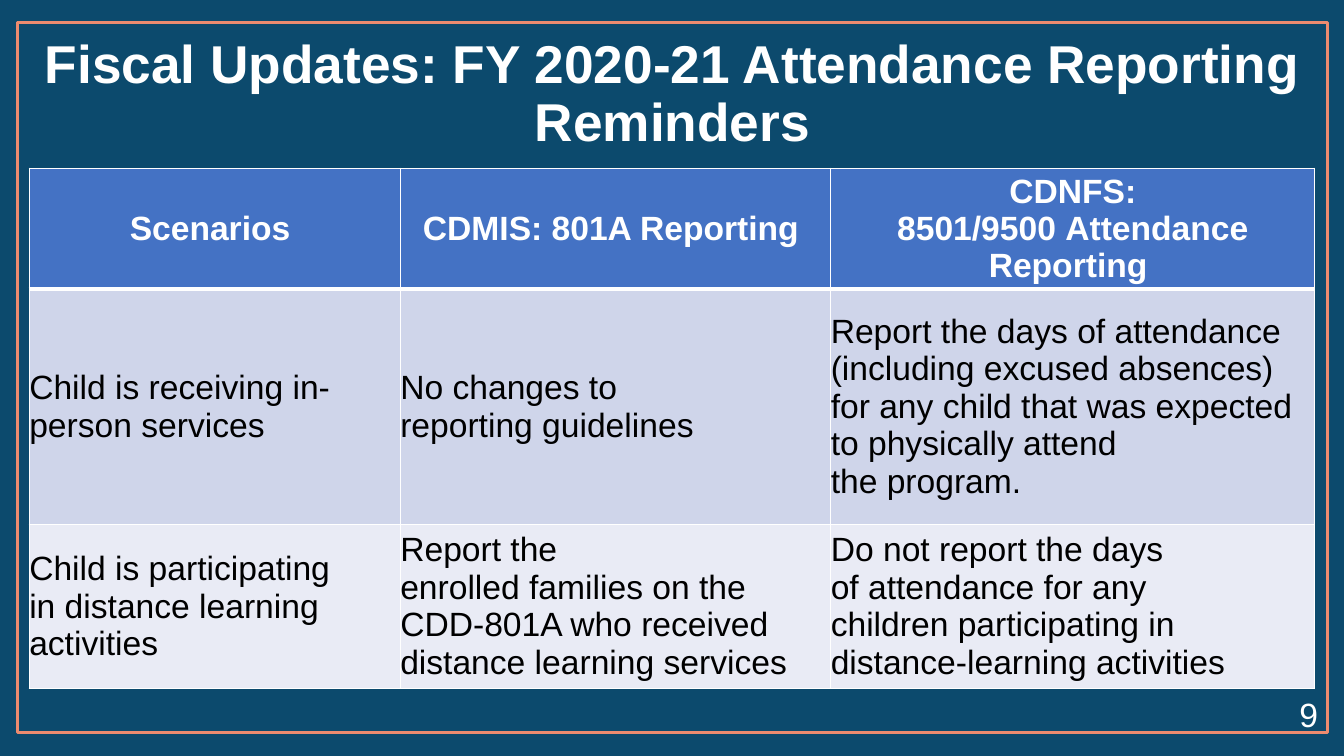
from dataclasses import dataclass

from lxml import etree
from pptx import Presentation
from pptx.dml.color import RGBColor
from pptx.enum.shapes import MSO_SHAPE
from pptx.enum.text import MSO_ANCHOR, PP_ALIGN
from pptx.oxml.ns import qn
from pptx.util import Inches, Pt

RECT = MSO_SHAPE.RECTANGLE
MIDDLE = MSO_ANCHOR.MIDDLE
LEFT, CENTER, RIGHT = PP_ALIGN.LEFT, PP_ALIGN.CENTER, PP_ALIGN.RIGHT


@dataclass(frozen=True)
class Theme:
    font: str = "Arial"
    background: str = "0C4A6D"
    frame: str = "ED8B6F"
    light: str = "FFFFFF"
    dark: str = "000000"
    header: str = "4472C4"
    bands: tuple = ("CFD5EA", "E9EBF5")
    title_size: int = 38
    body_size: int = 24


THEME = Theme()
TITLE = "Fiscal Updates: FY 2020-21 Attendance Reporting Reminders"
COLUMN_WIDTHS = (3.68, 4.27, 4.8)
ROW_HEIGHTS = (1.11, 2.33, 1.63)
# A tilde stands for a no-break space, which keeps two words on one line.
NO_BREAK = chr(160)
REPORTING_RULES = (
    ("Scenarios~", "CDMIS: 801A Reporting~",
     "CDNFS: 8501/9500~Attendance Reporting~"),
    ("Child is receiving in-person~services~",
     "No~changes to reporting~guidelines",
     "Report the days of~attendance (including~excused absences) for any~child "
     "that was expected to~physically attend the~program.~"),
    ("Child is~participating in~distance learning activities~~",
     "Report~the enrolled~families~on the CDD-801A who~received "
     "distance~learning~services",
     "Do not report the days of~attendance for any children~participating in "
     "distance-learning activities"),
)


def rgb(color):
    return RGBColor.from_string(color)


def write(tf, text, size, color, align, bold=False):
    """Fill a text frame with one paragraph of one run."""
    tf.word_wrap = True
    p = tf.paragraphs[0]
    p.alignment = align
    r = p.add_run()
    r.text = text
    r.font.name = THEME.font
    r.font.size = Pt(size)
    r.font.bold = bold
    r.font.color.rgb = rgb(color)
    return p


def add_frame(slide, left, top, width, height):
    sp = slide.shapes.add_shape(RECT, Inches(left), Inches(top),
                                Inches(width), Inches(height))
    sp.shadow.inherit = False
    sp.fill.background()
    sp.line.color.rgb = rgb(THEME.frame)
    sp.line.width = Pt(2)


def add_text(slide, box, text, size, align, bold=False):
    tf = slide.shapes.add_textbox(*map(Inches, box)).text_frame
    tf.vertical_anchor = MIDDLE
    return write(tf, text, size, THEME.light, align, bold)


def set_borders(cell, bottom):
    """Draw white cell borders; the bottom one has its own width in points."""
    tc_pr = cell._tc.get_or_add_tcPr()
    widths = {"a:lnL": 1, "a:lnR": 1, "a:lnT": 1, "a:lnB": bottom}
    for i, (tag, width) in enumerate(widths.items()):
        ln = etree.Element(qn(tag), w=str(Pt(width)))
        fill = etree.SubElement(ln, qn("a:solidFill"))
        etree.SubElement(fill, qn("a:srgbClr"), val=THEME.light)
        tc_pr.insert(i, ln)


def fill_cell(cell, text, is_header, fill):
    cell.margin_left = cell.margin_right = 0
    cell.margin_top = cell.margin_bottom = 0
    cell.vertical_anchor = MIDDLE
    cell.fill.solid()
    cell.fill.fore_color.rgb = rgb(fill)
    write(cell.text_frame, text.replace("~", NO_BREAK), THEME.body_size,
          THEME.light if is_header else THEME.dark,
          CENTER if is_header else LEFT, is_header)
    set_borders(cell, bottom=3 if is_header else 1)


def add_rules_table(slide, left, top):
    table = slide.shapes.add_table(
        len(ROW_HEIGHTS), len(COLUMN_WIDTHS), Inches(left), Inches(top),
        Inches(sum(COLUMN_WIDTHS)), Inches(sum(ROW_HEIGHTS))).table
    for column, width in zip(table.columns, COLUMN_WIDTHS):
        column.width = Inches(width)
    for row, height in zip(table.rows, ROW_HEIGHTS):
        row.height = Inches(height)
    fills = (THEME.header, *THEME.bands)
    for i, (texts, fill) in enumerate(zip(REPORTING_RULES, fills)):
        for j, text in enumerate(texts):
            fill_cell(table.cell(i, j), text, i == 0, fill)


def main():
    prs = Presentation()
    prs.slide_width, prs.slide_height = Inches(13.33), Inches(7.5)
    slide = prs.slides.add_slide(prs.slide_layouts[6])
    slide.background.fill.solid()
    slide.background.fill.fore_color.rgb = rgb(THEME.background)

    add_frame(slide, 0.17, 0.22, 13, 7.05)
    title = add_text(slide, (0.17, 0.22, 13, 1.45), TITLE,
                     THEME.title_size, CENTER, bold=True)
    title.line_spacing = 0.9
    add_rules_table(slide, 0.29, 1.67)
    add_text(slide, (10.17, 6.88, 3, 0.4), "9", THEME.body_size, RIGHT)
    prs.save("out.pptx")


if __name__ == "__main__":
    main()
